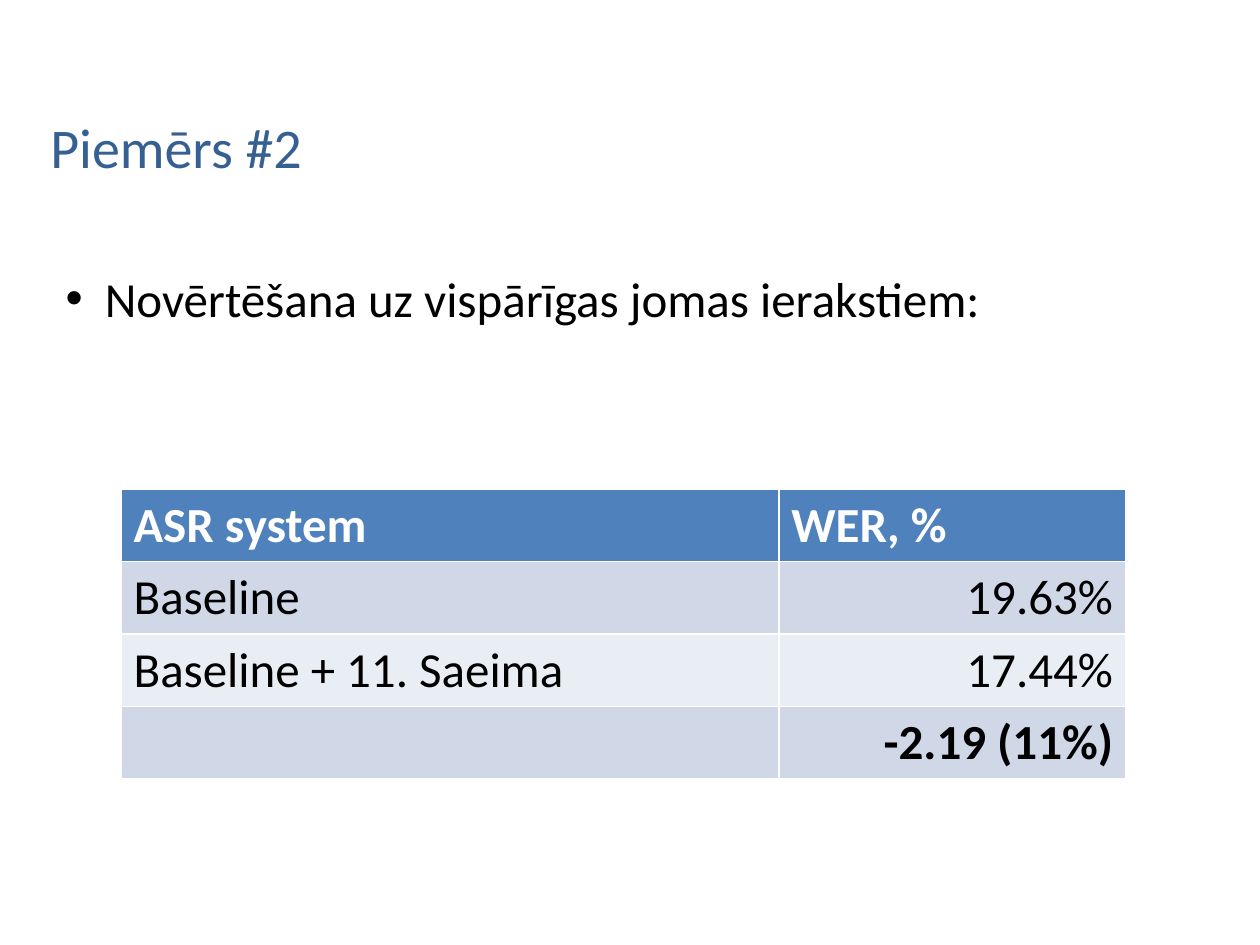
"""Build a slide with a title, one bullet and a table of speech recognition error rates."""
from pptx import Presentation
from pptx.dml.color import RGBColor
from pptx.enum.text import MSO_ANCHOR, MSO_AUTO_SIZE, PP_ALIGN
from pptx.util import Cm, Pt

TOP, NO_FIT = MSO_ANCHOR.TOP, MSO_AUTO_SIZE.NONE
LEFT, RIGHT = PP_ALIGN.LEFT, PP_ALIGN.RIGHT

TITLE_BLUE = RGBColor(0x37, 0x60, 0x92)
HEADER_BLUE = RGBColor(0x4F, 0x81, 0xBD)
BANDS = [RGBColor(0xE9, 0xED, 0xF4), RGBColor(0xD0, 0xD8, 0xE8)]
BLACK = RGBColor(0, 0, 0)
WHITE = RGBColor(0xFF, 0xFF, 0xFF)

TITLE = "Piemērs #2"
BULLET = "Novērtēšana uz vispārīgas jomas ierakstiem:"
RESULTS = [
    ("ASR system", "WER, %"),
    ("Baseline", "19.63%"),
    ("Baseline + 11. Saeima", "17.44%"),
    ("", "-2.19 (11%)"),
]

TITLE_BOX = (0.76, 1.47, 23.29, 4.37)
BULLET_BOX = (1.07, 5.28, 22.99, 1.45)
TABLE_LEFT, TABLE_TOP = 2.44, 9.86
COLUMN_WIDTHS = (13.26, 6.99)
ROW_HEIGHT = 1.44
BULLET_INDENT = Cm(0.79)


def set_all(target, values):
    for name, value in values.items():
        setattr(target, name, value)


def write(frame, text, size, color, bold=False, **paragraph_format):
    paragraph = frame.paragraphs[0]
    set_all(paragraph, paragraph_format)
    run = paragraph.add_run()
    run.text = text
    set_all(run.font, {"name": "Calibri", "size": Pt(size), "bold": bold})
    run.font.color.rgb = color
    return paragraph


def place(placeholder, box):
    sides = ("left", "top", "width", "height")
    set_all(placeholder, dict(zip(sides, map(Cm, box))))
    frame = placeholder.text_frame
    set_all(frame, {"word_wrap": True, "auto_size": NO_FIT, "vertical_anchor": TOP})
    return frame


def add_results(slide):
    table = slide.shapes.add_table(
        len(RESULTS), len(COLUMN_WIDTHS), Cm(TABLE_LEFT), Cm(TABLE_TOP),
        Cm(sum(COLUMN_WIDTHS)), Cm(ROW_HEIGHT * len(RESULTS))).table
    for column, width in zip(table.columns, COLUMN_WIDTHS):
        column.width = Cm(width)
    last = len(RESULTS) - 1
    for r, result in enumerate(RESULTS):
        header = r == 0
        for c, text in enumerate(result):
            cell = table.cell(r, c)
            cell.fill.solid()
            cell.fill.fore_color.rgb = HEADER_BLUE if header else BANDS[r % 2]
            if text:
                write(cell.text_frame, text, 28, WHITE if header else BLACK,
                      bold=r in (0, last),
                      alignment=RIGHT if c and not header else LEFT)


def main():
    presentation = Presentation()
    set_all(presentation, {"slide_width": Cm(25.4), "slide_height": Cm(19.05)})
    slide = presentation.slides.add_slide(presentation.slide_layouts[1])
    title, body = slide.placeholders
    write(place(title, TITLE_BOX), TITLE, 32, TITLE_BLUE,
          alignment=LEFT, line_spacing=1.5)
    bullet = write(place(body, BULLET_BOX), BULLET, 28, BLACK, space_before=Pt(0))
    indents = bullet._p.get_or_add_pPr()
    indents.set("marL", str(BULLET_INDENT))
    indents.set("indent", str(-BULLET_INDENT))
    add_results(slide)
    presentation.save("out.pptx")


if __name__ == "__main__":
    main()
